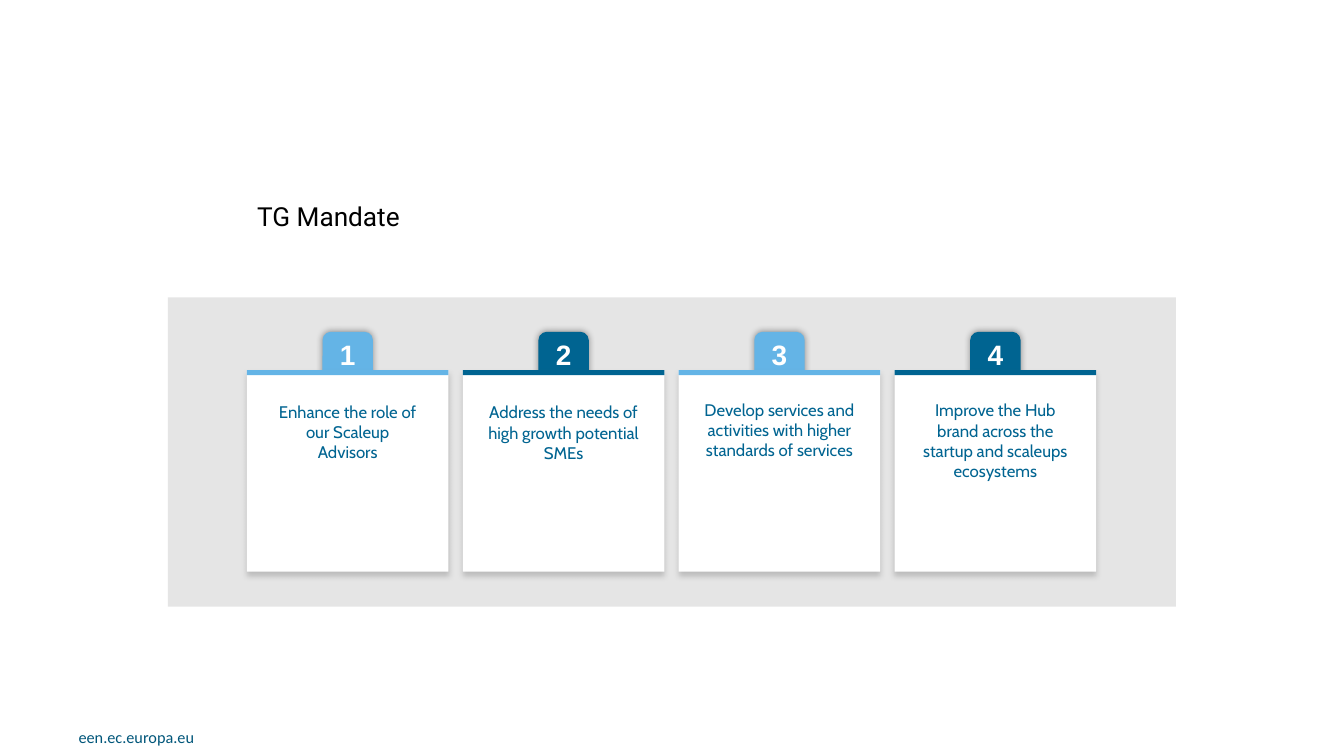
from dataclasses import dataclass

from lxml import etree
from pptx import Presentation
from pptx.dml.color import RGBColor
from pptx.enum.shapes import MSO_SHAPE
from pptx.enum.text import MSO_ANCHOR, MSO_AUTO_SIZE, PP_ALIGN
from pptx.oxml.ns import qn
from pptx.shapes.autoshape import Shape
from pptx.shapes.shapetree import GroupShapes, SlideShapes
from pptx.text.text import TextFrame
from pptx.util import Pt

RECTANGLE = MSO_SHAPE.RECTANGLE
ROUNDED = MSO_SHAPE.ROUNDED_RECTANGLE
LEFT = PP_ALIGN.LEFT
CENTER = PP_ALIGN.CENTER
TOP = MSO_ANCHOR.TOP
NO_FIT = MSO_AUTO_SIZE.NONE

COLORS = {
    "panel": "CCCCCC",
    "white": "FFFFFF",
    "black": "000000",
    "gray": "808080",
    "light": "64B4E6",
    "dark": "006491",
    "footer": "00567A",
}
TITLE_ONLY = 5
CARD_LEFT = 176.4
CARD_TOP = 264.4
CARD_SIZE = 144
CARD_PITCH = 154.2
BADGE_WIDTH = 36
NUMBER_WIDTH = 31


@dataclass(frozen=True)
class Frame:
    left: float
    top: float
    width: float
    height: float

    def lengths(self) -> tuple[Pt, Pt, Pt, Pt]:
        return Pt(self.left), Pt(self.top), Pt(self.width), Pt(self.height)


@dataclass(frozen=True)
class Shadow:
    color: str
    blur: float
    distance: float
    degrees: int


@dataclass(frozen=True)
class TextStyle:
    font: str
    size: float
    color: str
    bold: bool = False
    align: PP_ALIGN = CENTER


@dataclass(frozen=True)
class Card:
    caption: str
    color: str
    caption_top: float
    caption_inset: float = 14.4


BADGE_SHADOW = Shadow("black", 5, 0, 0)
CARD_SHADOW = Shadow("gray", 4, 3, 90)
TITLE_STYLE = TextStyle("Roboto", 18.7, "black", align=LEFT)
FOOTER_STYLE = TextStyle("Calibri", 20, "footer", align=LEFT)
NUMBER_STYLE = TextStyle("Arial", 20, "white", bold=True)
CAPTION_STYLE = TextStyle("Cabin", 12, "dark")

CARDS = [
    Card("Enhance the role of our Scaleup Advisors", "light", 286.8, 21.4),
    Card("Address the needs of high growth potential SMEs", "dark", 287.2),
    Card("Develop services and activities with higher standards of services", "light", 285.4),
    Card("Improve the Hub brand across the startup and scaleups ecosystems", "dark", 285.8),
]


def rgb(name: str) -> RGBColor:
    return RGBColor.from_string(COLORS[name])


def set_alpha(parent: etree._Element, percent: int) -> None:
    color = parent.find(".//" + qn("a:srgbClr"))
    etree.SubElement(color, qn("a:alpha"), val=str(percent * 1000))


def add_shadow(shape: Shape, shadow: Shadow) -> None:
    effects = shape.element.spPr.find(qn("a:effectLst"))
    outer = etree.SubElement(
        effects,
        qn("a:outerShdw"),
        blurRad=str(Pt(shadow.blur)),
        dist=str(Pt(shadow.distance)),
        dir=str(shadow.degrees * 60000),
        algn="ctr",
        rotWithShape="0",
    )
    etree.SubElement(outer, qn("a:srgbClr"), val=COLORS[shadow.color])
    set_alpha(outer, 40)


def add_block(
    shapes: SlideShapes | GroupShapes,
    frame: Frame,
    color: str,
    kind: MSO_SHAPE = RECTANGLE,
    shadow: Shadow | None = None,
) -> Shape:
    shape = shapes.add_shape(kind, *frame.lengths())
    shape.shadow.inherit = False
    shape.fill.solid()
    shape.fill.fore_color.rgb = rgb(color)
    shape.line.fill.background()
    if shadow:
        add_shadow(shape, shadow)
    return shape


def write_text(body: TextFrame, text: str, style: TextStyle) -> None:
    body.text = text
    body.auto_size = NO_FIT
    body.vertical_anchor = TOP
    para = body.paragraphs[0]
    para.alignment = style.align
    para.font.name = style.font
    para.font.size = Pt(style.size)
    para.font.bold = style.bold
    para.font.color.rgb = rgb(style.color)


def add_text(
    shapes: SlideShapes | GroupShapes,
    frame: Frame,
    text: str,
    style: TextStyle,
    wrap: bool = True,
) -> TextFrame:
    body = shapes.add_textbox(*frame.lengths()).text_frame
    write_text(body, text, style)
    body.word_wrap = wrap
    return body


def add_card(shapes: SlideShapes, index: int, card: Card) -> None:
    left = CARD_LEFT + index * CARD_PITCH
    middle = left + CARD_SIZE / 2
    group = shapes.add_group_shape().shapes
    badge = Frame(middle - BADGE_WIDTH / 2, 237, BADGE_WIDTH, 38)
    add_block(group, badge, card.color, ROUNDED, BADGE_SHADOW)
    add_block(group, Frame(left, CARD_TOP, CARD_SIZE, CARD_SIZE), "white", shadow=CARD_SHADOW)
    add_block(group, Frame(left, CARD_TOP, CARD_SIZE, 3.6), card.color)
    number = Frame(middle - NUMBER_WIDTH / 2, 237.6, NUMBER_WIDTH, 33.8)
    add_text(group, number, str(index + 1), NUMBER_STYLE, wrap=False)
    caption_width = CARD_SIZE - 2 * card.caption_inset
    caption = Frame(left + card.caption_inset, card.caption_top, caption_width, 101.5)
    body = add_text(group, caption, card.caption, CAPTION_STYLE)
    body.margin_left = body.margin_right = body.margin_top = body.margin_bottom = Pt(0)


def main() -> None:
    deck = Presentation()
    deck.slide_width, deck.slide_height = Pt(960), Pt(540)
    page = deck.slides.add_slide(deck.slide_layouts[TITLE_ONLY])
    shapes = page.shapes

    footer = add_text(shapes, Frame(49, 513.4, 123, 23.8), "een.ec.europa.eu", FOOTER_STYLE)
    span = footer.paragraphs[0].runs[0]
    span.font.size = Pt(FOOTER_STYLE.size)
    span.font._element.set("baseline", "30000")

    panel = add_block(shapes, Frame(120, 212.4, 720, 221), "panel")
    set_alpha(panel.element.spPr, 50)

    title = shapes.title
    title.left, title.top, title.width, title.height = Frame(176.4, 139.7, 612, 43.2).lengths()
    write_text(title.text_frame, "TG Mandate", TITLE_STYLE)

    for index, card in enumerate(CARDS):
        add_card(shapes, index, card)

    deck.save("out.pptx")


if __name__ == "__main__":
    main()
